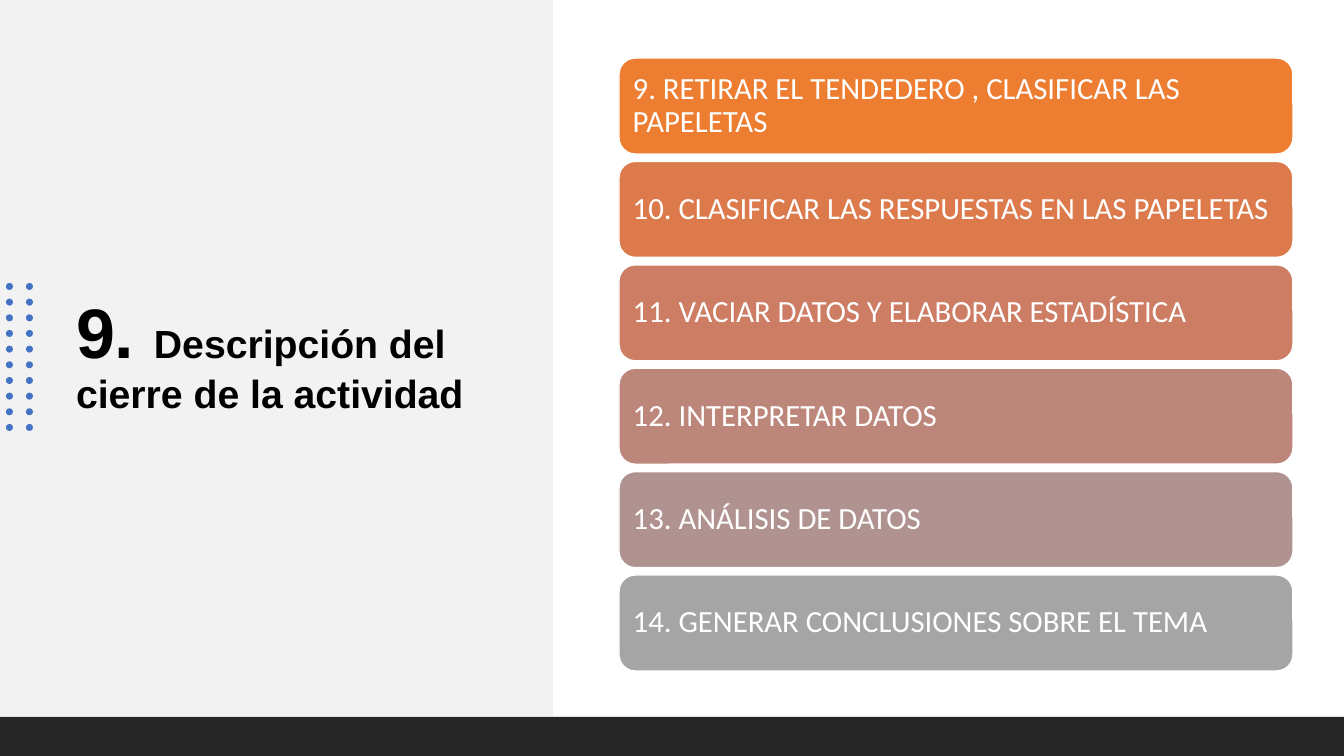
from pptx import Presentation
from pptx.dml.color import RGBColor
from pptx.enum.shapes import MSO_SHAPE
from pptx.enum.text import MSO_ANCHOR, MSO_AUTO_SIZE, PP_ALIGN
from pptx.util import Pt

RECTANGLE = MSO_SHAPE.RECTANGLE
ROUNDED = MSO_SHAPE.ROUNDED_RECTANGLE
OVAL = MSO_SHAPE.OVAL
MIDDLE = MSO_ANCHOR.MIDDLE
LEFT = PP_ALIGN.LEFT
NO_AUTOFIT = MSO_AUTO_SIZE.NONE

SLIDE_WIDTH, SLIDE_HEIGHT = 1344, 756
EMU_PER_PX = 12192000 / SLIDE_WIDTH

COLORS = {
    "panel": "F2F2F2",
    "footer": "262626",
    "dot": "4472C4",
    "title": "000000",
    "white": "FFFFFF",
}

STEPS = [
    ("9. RETIRAR EL TENDEDERO , CLASIFICAR LAS PAPELETAS", "ED7D31"),
    ("10. CLASIFICAR LAS RESPUESTAS EN LAS PAPELETAS", "DC7A4B"),
    ("11. VACIAR DATOS Y ELABORAR ESTADÍSTICA", "CC7D64"),
    ("12. INTERPRETAR DATOS", "BD867B"),
    ("13. ANÁLISIS DE DATOS", "B09391"),
    ("14. GENERAR CONCLUSIONES SOBRE EL TEMA", "A5A5A5"),
]


def px(length):
    return round(length * EMU_PER_PX)


def color(hex_string):
    return RGBColor.from_string(hex_string)


def add_block(shapes, kind, left, top, width, height, fill):
    block = shapes.add_shape(kind, px(left), px(top), px(width), px(height))
    block.shadow.inherit = False
    block.fill.solid()
    block.fill.fore_color.rgb = color(fill)
    block.line.fill.background()
    return block


def format_span(span, font_name, size, hex_string, bold=False):
    span.font.name = font_name
    span.font.size = Pt(size)
    span.font.bold = bold
    span.font.color.rgb = color(hex_string)


def format_title(title):
    title.left, title.top = px(66), px(133)
    title.width, title.height = px(427), px(449)
    frame = title.text_frame
    frame.word_wrap = True
    frame.auto_size = NO_AUTOFIT
    frame.vertical_anchor = MIDDLE
    para = frame.paragraphs[0]
    para.alignment = LEFT
    para.line_spacing = 0.9
    for text, size in [("9. ", 50), ("Descripción del cierre de la actividad", 28)]:
        span = para.add_run()
        span.text = text
        format_span(span, "Arial", size, COLORS["title"], bold=True)


def add_dots(slide, rows=10, columns=2):
    dots = slide.shapes.add_group_shape()
    for row in range(rows):
        for column in range(columns):
            top = 283 + 141 * row / (rows - 1)
            add_block(dots.shapes, OVAL, 6 + 20 * column, top, 7, 7, COLORS["dot"])


def add_step(shapes, top, text, fill):
    bar = add_block(shapes, ROUNDED, 619, top, 674, 96, fill)
    bar.adjustments[0] = 0.17
    bar.line.color.rgb = color(COLORS["white"])
    bar.line.width = Pt(1)
    frame = bar.text_frame
    frame.word_wrap = True
    frame.vertical_anchor = MIDDLE
    # The rounded corners already inset the text by about 5 px
    frame.margin_left = frame.margin_right = px(9)
    frame.margin_top = frame.margin_bottom = px(9)
    frame.text = text
    para = frame.paragraphs[0]
    para.alignment = LEFT
    para.line_spacing = 0.9
    format_span(para.runs[0], "Calibri", 22, COLORS["white"])


def add_steps(slide):
    steps = slide.shapes.add_group_shape()
    pitch = 517 / (len(STEPS) - 1)
    for index, (text, fill) in enumerate(STEPS):
        add_step(steps.shapes, 58 + index * pitch, text, fill)


def main():
    deck = Presentation()
    deck.slide_width, deck.slide_height = px(SLIDE_WIDTH), px(SLIDE_HEIGHT)
    page = deck.slides.add_slide(deck.slide_layouts[5])

    # Left panel, placed behind the title
    panel = add_block(page.shapes, RECTANGLE, 0, 0, 553, 716, COLORS["panel"])
    title = page.shapes.title
    title.element.addprevious(panel.element)
    format_title(title)

    # Dot ornament and footer band
    add_dots(page)
    add_block(page.shapes, RECTANGLE, 0, 717, SLIDE_WIDTH, 39, COLORS["footer"])

    # List of closing steps
    add_steps(page)

    deck.save("out.pptx")


if __name__ == "__main__":
    main()
